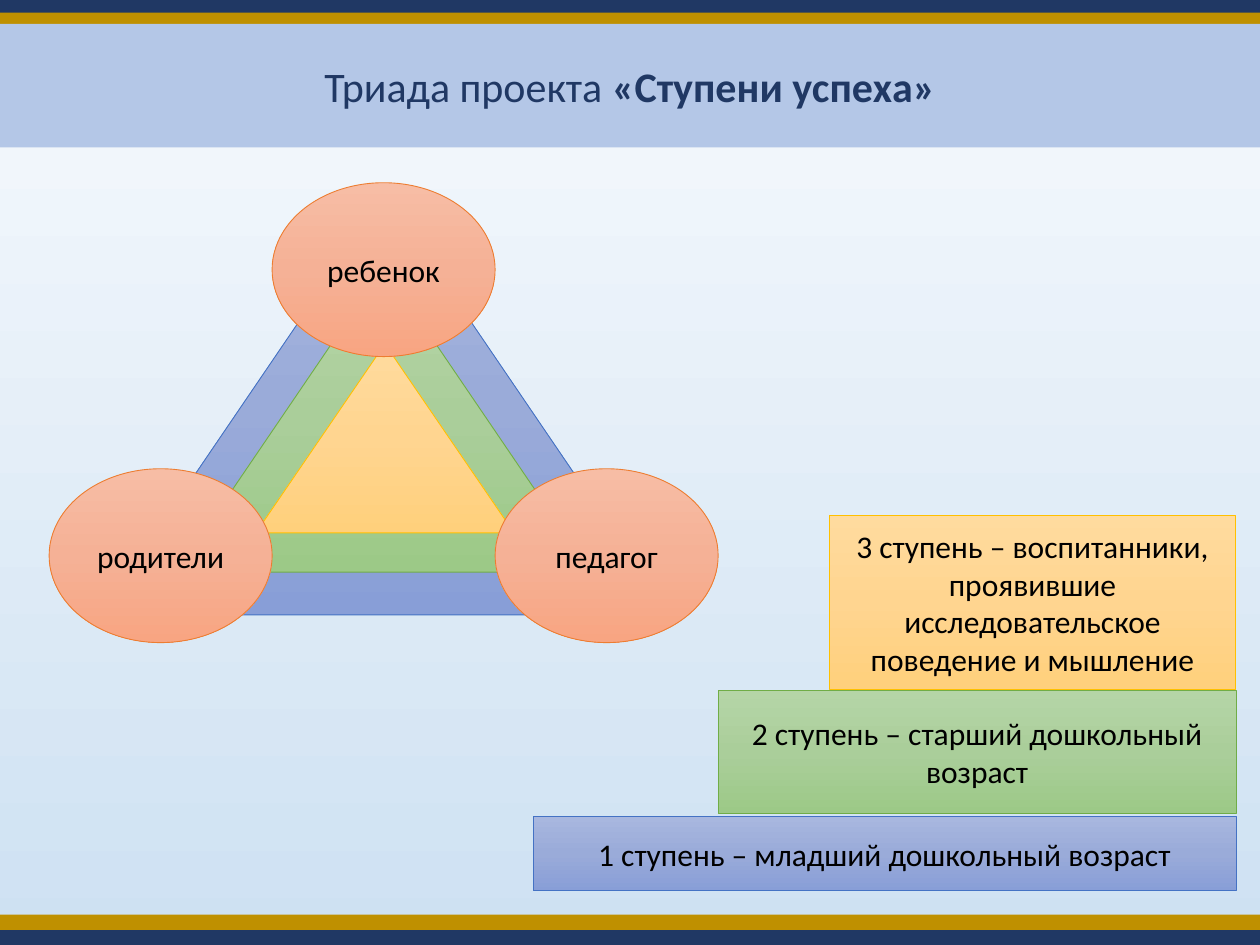
from copy import deepcopy

from pptx import Presentation
from pptx.dml.color import RGBColor as RGB
from pptx.enum.shapes import MSO_SHAPE as Kind
from pptx.enum.text import MSO_ANCHOR as Anchor, PP_ALIGN as Align
from pptx.oxml.ns import qn
from pptx.util import Inches, Pt

FONT = "Calibri"
NAVY = RGB(0x20, 0x38, 0x64)
GOLD = RGB(0xBF, 0x90, 0x00)
PALE = RGB(0xB4, 0xC7, 0xE7)
BLACK = RGB(0, 0, 0)
SKY = RGB(0xF7, 0xFA, 0xFD), RGB(0xCE, 0xE1, 0xF2)

# Each tone: three gradient colours and the outline
BLUE = (RGB(0xA8, 0xB7, 0xDF), RGB(0x9A, 0xAB, 0xD9),
        RGB(0x88, 0x9E, 0xD7), RGB(0x44, 0x72, 0xC4))
GREEN = (RGB(0xB5, 0xD5, 0xA7), RGB(0xAA, 0xCE, 0x9A),
         RGB(0x9C, 0xC9, 0x87), RGB(0x70, 0xAD, 0x47))
AMBER = (RGB(0xFF, 0xDB, 0x9E), RGB(0xFF, 0xD5, 0x90),
         RGB(0xFF, 0xD0, 0x7C), RGB(0xFF, 0xC0, 0x00))
CORAL = (RGB(0xF7, 0xBD, 0xA5), RGB(0xF5, 0xB1, 0x96),
         RGB(0xF8, 0xA5, 0x82), RGB(0xED, 0x7D, 0x31))


class Board:
    """Holds the slide and draws its parts in one style."""

    def __init__(self, slide):
        self.slide = slide

    def fade(self, fill, colors):
        fill.gradient()
        fill.gradient_angle = 270  # top to bottom
        for stop, color in zip(fill.gradient_stops, colors):
            stop.color.rgb = color

    def back(self, colors):
        self.fade(self.slide.background.fill, colors)

    def shape(self, kind, box):
        item = self.slide.shapes.add_shape(kind, *map(Inches, box))
        item.shadow.inherit = False
        return item

    def band(self, top, height, color):
        item = self.shape(Kind.RECTANGLE, (0, top, 10, height))
        item.fill.solid()
        item.fill.fore_color.rgb = color
        item.line.fill.background()
        return item

    def tile(self, kind, box, tone, text=""):
        item = self.shape(kind, box)
        first, mid, last, edge = tone
        self.fade(item.fill, (first, last))
        # Add the middle stop
        stops = item._element.spPr.find(".//" + qn("a:gsLst"))
        stops.insert(1, deepcopy(stops[0]))
        stop = item.fill.gradient_stops[1]
        stop.position = 0.5
        stop.color.rgb = mid
        item.line.color.rgb = edge
        item.line.width = Pt(0.5)
        if text:
            self.label(item, [(text, False)], 18, BLACK)

    def label(self, item, runs, size, color):
        frame = item.text_frame
        frame.word_wrap = True
        frame.vertical_anchor = Anchor.MIDDLE
        para = frame.paragraphs[0]
        para.alignment = Align.CENTER
        para.font.name = FONT
        para.font.size = Pt(size)
        para.font.color.rgb = color
        for text, bold in runs:
            run = para.add_run()
            run.text = text
            run.font.color.rgb = color
            if bold:
                run.font.bold = True


def main():
    deck = Presentation()
    deck.slide_width, deck.slide_height = Inches(10), Inches(7.5)
    board = Board(deck.slides.add_slide(deck.slide_layouts[6]))
    board.back(SKY)

    # Edge bands
    for top, color in ((0, NAVY), (0.1, GOLD), (7.38, NAVY), (7.26, GOLD)):
        board.band(top, 0.12, color)

    # Nested triangles
    for box, tone in (
        ((0.79, 1.55, 4.53, 3.33), BLUE),
        ((1.4, 2.12, 3.29, 2.42), GREEN),
        ((2.03, 2.73, 2.05, 1.5), AMBER),
    ):
        board.tile(Kind.ISOSCELES_TRIANGLE, box, tone)

    # Corners of the triad, one oval width apart
    wide, high = 1.77, 1.38
    for col, top, text in ((1, 1.45, "ребенок"), (2, 3.72, "педагог"),
                           (0, 3.72, "родители")):
        board.tile(Kind.OVAL, (0.39 + col * wide, top, wide, high),
                   CORAL, text)

    # Steps, aligned at the right edge
    right = 9.81
    for left, top, height, tone, text in (
        (4.23, 6.48, 0.59, BLUE, "1 ступень – младший дошкольный возраст"),
        (5.7, 5.48, 0.98, GREEN, "2 ступень – старший дошкольный возраст"),
        (6.58, 4.09, 1.38, AMBER, "3 ступень – воспитанники, проявившие "
                                  "исследовательское поведение и мышление"),
    ):
        board.tile(Kind.RECTANGLE, (left, top, right - left, height),
                   tone, text)

    # Title
    title = board.band(0.19, 0.98, PALE)
    board.label(title, [("Триада проекта ", False),
                        ("«Ступени успеха»", True)], 24, NAVY)

    deck.save("out.pptx")


if __name__ == "__main__":
    main()
